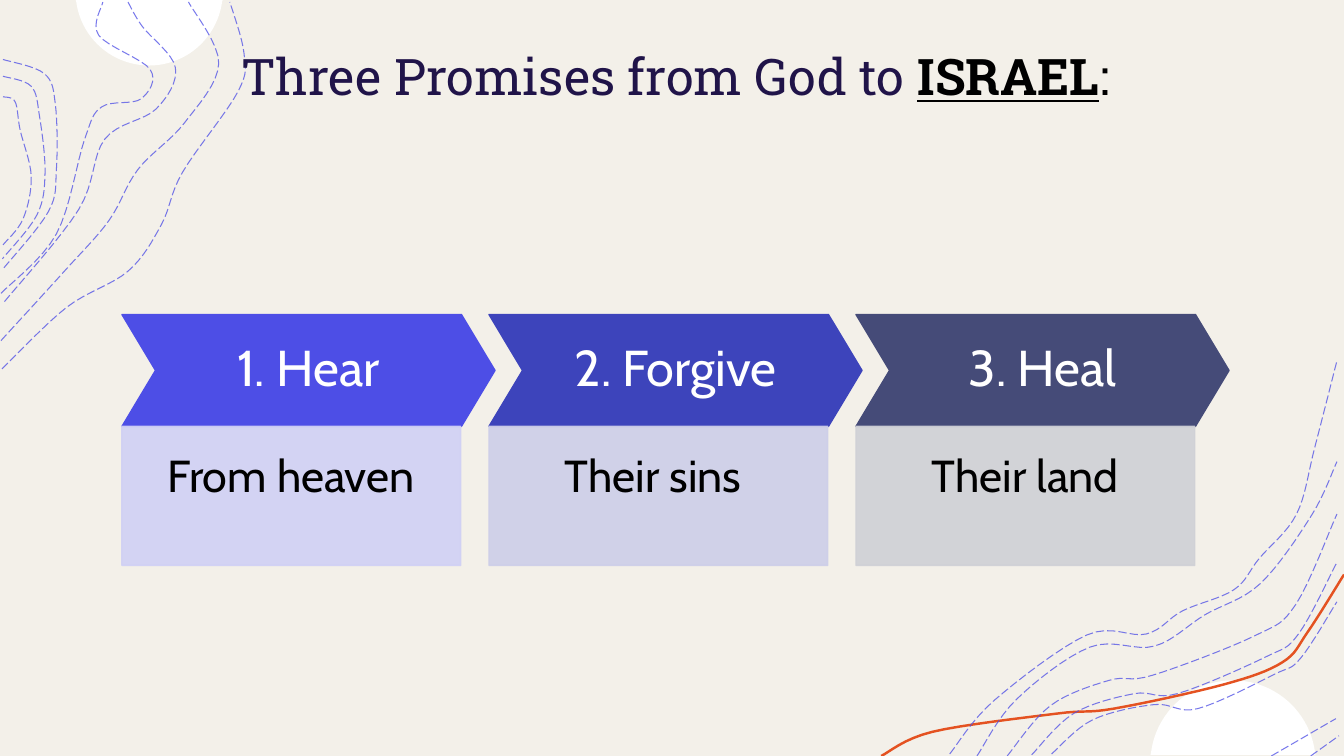
"""Build the slide of three promises with contour-line decoration."""
from dataclasses import dataclass
from math import cos, pi, sin

from lxml import etree
from pptx import Presentation
from pptx import util as u
from pptx.dml import color
from pptx.enum import dml, shapes, text
from pptx.oxml import ns

Point = tuple[float, float]
Curve = tuple[Point, ...]


@dataclass(frozen=True)
class Theme:
    """Colours, fonts and type sizes."""
    paper: str = "F3F0E9"
    white: str = "FFFFFF"
    ink: str = "000000"
    heading: str = "201449"
    contour: str = "4D4EE6"
    ribbon: str = "E45221"
    heading_font: str = "Roboto Slab"
    body_font: str = "Cabin"
    heading_size: int = 36
    promise_size: int = 36
    detail_size: int = 32


@dataclass(frozen=True)
class Promise:
    """One chevron and the panel below it."""
    name: str
    detail: str
    strong: str
    pale: str


@dataclass(frozen=True)
class Disc:
    """A disc cut by the slide edge, bulging down (1) or up (-1)."""
    x: float
    edge: float
    radius: float
    bulge: int


THEME = Theme()
PROMISES = (
    Promise("1. Hear", "From heaven", "4D4EE6", "D0D0F5"),
    Promise("2. Forgive", "Their sins ", "3D44BB", "CDCEE8"),
    Promise("3. Heal", "Their land", "454B78", "CFD0D6"),
)
LEFT, PITCH, TOP = 1.21, 3.64, 3.12
CHEVRON_WIDTH, CHEVRON_HEIGHT = 3.7, 1.11
PANEL_WIDTH, PANEL_HEIGHT = 3.36, 1.38
DISC_OFFSET = 0.08
DISCS = (Disc(1.48, 0, 0.73, 1), Disc(12.23, 7.49, 0.82, -1))

RIBBON = ((8.74, 7.5), (9.25, 7.26), (10.48, 7.08), (11.05, 7.03), (12.14, 6.79),
          (12.72, 6.57), (12.97, 6.27), (13.33, 5.7))
CONTOURS = (
    ((0.02, 3.66), (0.66, 3.05), (1.27, 2.69), (1.6, 2.23), (1.81, 1.71), (2.36, 0.91),
     (2.42, 0.53), (2.28, 0.02)),
    ((0.01, 3.38), (0.64, 2.69), (1.08, 2.19), (1.37, 1.68), (1.83, 1.22), (2.17, 0.63),
     (1.87, 0.02)),
    ((1.27, 0.02), (1.41, 0.26), (1.74, 0.67), (1.55, 1.08), (1.04, 1.38), (0.78, 2.08),
     (0.03, 3.01)),
    ((0.01, 2.91), (0.56, 2.32), (0.84, 1.38), (1.01, 1.06), (1.4, 0.98), (1.49, 0.69),
     (0.98, 0.35), (1.02, 0.02)),
    ((9.42, 7.48), (9.86, 6.95), (10.78, 6.3), (11.37, 6.29), (11.73, 6.06), (12.24, 5.85),
     (12.49, 5.54), (12.86, 5.1), (13.04, 4.44), (13.26, 3.58)),
    ((9.69, 7.5), (10.08, 6.94), (10.81, 6.42), (11.45, 6.41), (11.95, 6.1), (12.5, 5.79),
     (13.01, 5.11), (13.26, 4.58)),
    ((13, 7.5), (13.28, 7.3)),
    ((12.61, 7.5), (13.25, 7.13)),
)
NESTS = (
    (((0.03, 0.59), (0.44, 0.73), (0.55, 1.04), (0.56, 1.68), (0.48, 2.1), (0.02, 2.68)),
     ((0.03, 0.96), (0.15, 1.01), (0.2, 1.29), (0.31, 1.75), (0.23, 2.17), (0.03, 2.43))),
    (((10.43, 7.48), (10.84, 7.14), (11.45, 6.99), (11.88, 7.03), (12.64, 6.69),
      (12.9, 6.53), (13.26, 5.97)),
     ((9.99, 7.5), (10.42, 7), (11, 6.75), (11.43, 6.7), (12.44, 6.31), (12.85, 6),
      (13.26, 5.1))),
)


def rgb(value: str) -> color.RGBColor:
    """Turn a hex string into a colour."""
    return color.RGBColor.from_string(value)


def between(first: Curve, last: Curve, share: float = 0.45) -> Curve:
    """Blend two curves into the one that runs between them."""
    return tuple((a + (c - a) * share, b + (d - b) * share)
                 for (a, b), (c, d) in zip(first, last))


def smooth(anchors: Curve, steps: int = 8) -> list[Point]:
    """Sample a Catmull-Rom curve through the anchors."""
    padded = (anchors[0], *anchors, anchors[-1])
    curve = [anchors[0]]
    for before, start, end, after in zip(padded, padded[1:], padded[2:], padded[3:]):
        for t in (step / steps for step in range(1, steps + 1)):
            x, y = (b + (c - a) * t / 2 + (2 * a - 5 * b + 4 * c - d) * t * t / 2
                    + (3 * b - a - 3 * c + d) * t ** 3 / 2
                    for a, b, c, d in zip(before, start, end, after))
            curve.append((x, y))
    return curve


def set_opacity(shape, percent: int) -> None:
    """Make the fill and line colours of a shape translucent."""
    for tint in shape.element.spPr.iter(ns.qn("a:srgbClr")):
        etree.SubElement(tint, ns.qn("a:alpha")).set("val", str(percent * 1000))


def draw_outline(slide, points: list[Point], closed: bool):
    """Draw a freeform through points given in inches."""
    corners = [(u.Inches(x), u.Inches(y)) for x, y in points]
    builder = slide.shapes.build_freeform(*corners[0])
    builder.add_line_segments(corners[1:], close=closed)
    outline = builder.convert_to_shape()
    outline.shadow.inherit = False
    return outline


def draw_disc(slide, disc: Disc) -> None:
    """Draw the visible part of a disc."""
    turns = [pi * step / 48 for step in range(49)]
    arc = [(disc.x - disc.radius * cos(turn),
            disc.edge + disc.bulge * max(0, disc.radius * sin(turn) - DISC_OFFSET))
           for turn in turns]
    area = draw_outline(slide, arc, True)
    area.fill.solid()
    area.fill.fore_color.rgb = rgb(THEME.white)
    area.line.fill.background()


def draw_curve(slide, anchors: Curve, tint: str, width: float):
    """Draw one smooth open line."""
    curve = draw_outline(slide, smooth(anchors), False)
    curve.fill.background()
    curve.line.color.rgb = rgb(tint)
    curve.line.width = u.Pt(width)
    return curve


def draw_contour(slide, anchors: Curve) -> None:
    """Draw one dashed contour line."""
    contour = draw_curve(slide, anchors, THEME.contour, 0.75)
    contour.line.dash_style = dml.MSO_LINE.LONG_DASH
    set_opacity(contour, 75)


def add_run(paragraph, words: str, face: str, size: int, tint: str, strong: bool = False) -> None:
    """Add one run, bold and underlined when strong."""
    run = paragraph.add_run()
    run.text = words
    run.font.name, run.font.size = face, u.Pt(size)
    run.font.color.rgb = rgb(tint)
    run.font.bold = run.font.underline = strong


def draw_block(slide, kind, box: tuple[float, ...], tint: str, words: str, size: int,
               ink: str, inset: float, anchor):
    """Draw a filled shape with one centred line of text."""
    block = slide.shapes.add_shape(kind, *map(u.Inches, box))
    block.shadow.inherit = False
    block.fill.solid()
    block.fill.fore_color.rgb = block.line.color.rgb = rgb(tint)
    block.line.width = u.Pt(1)
    frame = block.text_frame
    frame.word_wrap, frame.vertical_anchor = True, anchor
    frame.margin_left = frame.margin_right = u.Inches(inset)
    frame.margin_top = frame.margin_bottom = u.Inches(inset)
    line = frame.paragraphs[0]
    line.alignment, line.line_spacing = text.PP_ALIGN.CENTER, 0.9
    add_run(line, words, THEME.body_font, size, ink)
    return block


def draw_promise(slide, index: int, promise: Promise) -> None:
    """Draw a chevron with its panel."""
    left = LEFT + index * PITCH
    chevron = draw_block(slide, shapes.MSO_SHAPE.CHEVRON, (left, TOP, CHEVRON_WIDTH, CHEVRON_HEIGHT),
                         promise.strong, promise.name, THEME.promise_size, THEME.white, 0.14,
                         text.MSO_ANCHOR.MIDDLE)
    chevron.adjustments[0] = 0.3
    panel = draw_block(slide, shapes.MSO_SHAPE.RECTANGLE,
                       (left, TOP + CHEVRON_HEIGHT, PANEL_WIDTH, PANEL_HEIGHT), promise.pale,
                       promise.detail, THEME.detail_size, THEME.ink, 0.27, text.MSO_ANCHOR.TOP)
    set_opacity(panel, 90)


def draw_heading(slide) -> None:
    """Draw the slide heading."""
    heading = slide.shapes.add_textbox(*map(u.Inches, (1.2, 0.31, 11, 1.59))).text_frame
    heading.word_wrap, heading.margin_top = True, u.Inches(0.14)
    line = heading.paragraphs[0]
    line.alignment = text.PP_ALIGN.CENTER
    for words, tint, strong in (("Three Promises from God to ", THEME.heading, False),
                                ("ISRAEL", THEME.ink, True), (":", THEME.ink, False)):
        add_run(line, words, THEME.heading_font, THEME.heading_size, tint, strong)


def main() -> None:
    """Build and save the slide."""
    deck = Presentation()
    deck.slide_width, deck.slide_height = u.Inches(13.33), u.Inches(7.5)
    slide = deck.slides.add_slide(deck.slide_layouts[6])
    slide.background.fill.solid()
    slide.background.fill.fore_color.rgb = rgb(THEME.paper)
    for disc in DISCS:
        draw_disc(slide, disc)
    draw_curve(slide, RIBBON, THEME.ribbon, 1.75)
    nested = [curve for outer, inner in NESTS for curve in (outer, between(outer, inner), inner)]
    for anchors in (*CONTOURS, *nested):
        draw_contour(slide, anchors)
    draw_heading(slide)
    for index, promise in enumerate(PROMISES):
        draw_promise(slide, index, promise)
    deck.save("out.pptx")


if __name__ == "__main__":
    main()
